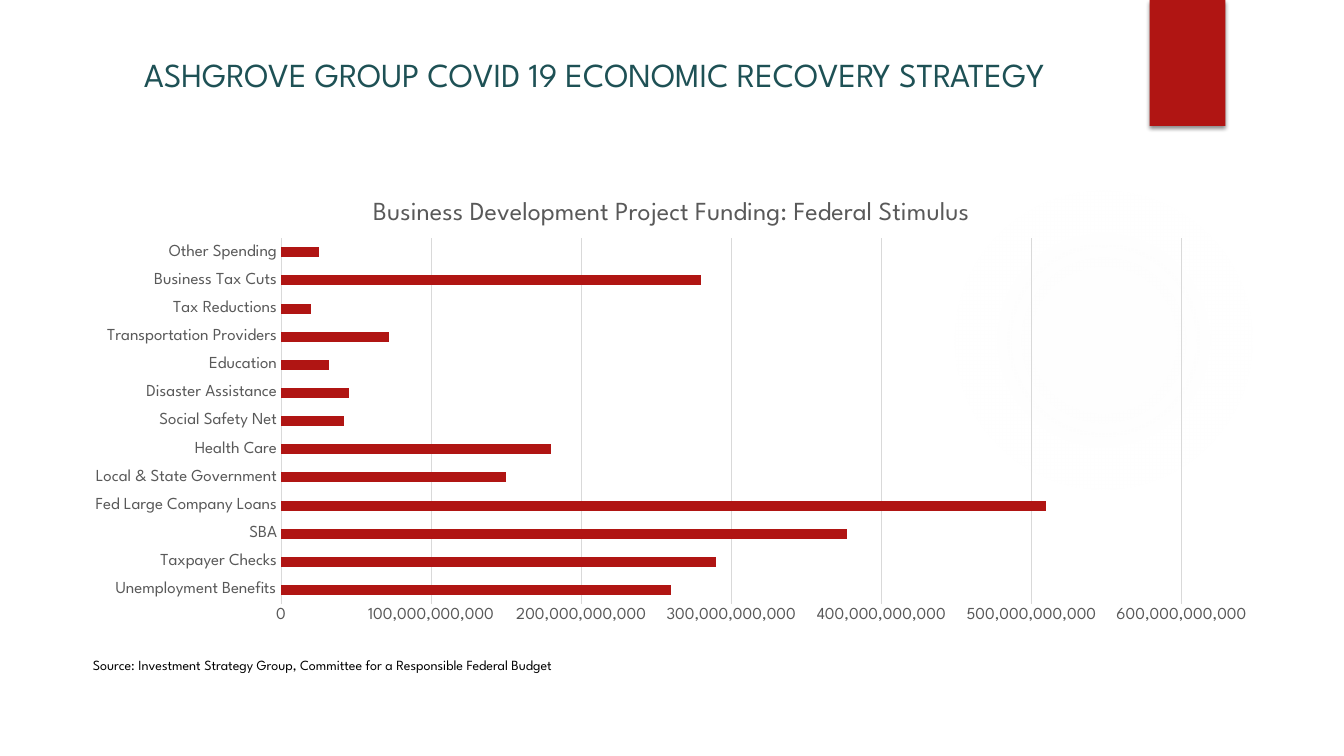
from lxml import etree
from pptx import Presentation, util as u
from pptx.chart.data import CategoryChartData
from pptx.dml.color import RGBColor
from pptx.enum import chart as charts, shapes, text
from pptx.oxml import parse_xml
from pptx.oxml.ns import nsdecls, qn

PX = 9525
FONT = "League Spartan"
COLORS = {
    "red": "B01513",
    "teal": "1E5155",
    "gray": "595959",
    "grid": "D9D9D9",
    "glow": "F3F3F3",
    "black": "000000",
}
BILLION = 10**9
FUNDING = {
    "Unemployment Benefits": 260,
    "Taxpayer Checks": 290,
    "SBA": 377,
    "Fed Large Company Loans": 510,
    "Local & State Government": 150,
    "Health Care": 180,
    "Social Safety Net": 42,
    "Disaster Assistance": 45,
    "Education": 32,
    "Transportation Providers": 72,
    "Tax Reductions": 20,
    "Business Tax Cuts": 280,
    "Other Spending": 25,
}


def px(*lengths):
    return [u.Emu(length * PX) for length in lengths]


def color(name):
    return RGBColor.from_string(COLORS[name])


def style_font(font, size, name):
    font.name = FONT
    font.size = u.Pt(size)
    font.bold = False
    font.color.rgb = color(name)


def add_run(paragraph, words, size, name):
    run = paragraph.add_run()
    run.text = words
    style_font(run.font, size, name)


def add_glow(slide, box):
    shape = slide.shapes.add_shape(shapes.MSO_SHAPE.OVAL, *px(*box))
    shape.shadow.inherit = False
    shape.line.fill.background()
    stops = "".join(
        f'<a:gs pos="{place * 1000}"><a:srgbClr val="{COLORS["glow"]}">'
        f'<a:alpha val="{alpha * 1000}"/></a:srgbClr></a:gs>'
        for place, alpha in ((0, 7), (36, 6), (69, 0), (100, 0))
    )
    gradient = parse_xml(
        f'<a:gradFill {nsdecls("a")}><a:gsLst>{stops}</a:gsLst><a:path path="circle">'
        '<a:fillToRect l="50000" t="50000" r="50000" b="50000"/></a:path></a:gradFill>'
    )
    shape.element.spPr.find(qn("a:prstGeom")).addnext(gradient)


def add_ribbon(slide, box):
    shape = slide.shapes.add_shape(shapes.MSO_SHAPE.RECTANGLE, *px(*box))
    shape.shadow.inherit = False
    shape.fill.solid()
    shape.fill.fore_color.rgb = color("red")
    shape.line.fill.background()
    shadow = parse_xml(
        f'<a:outerShdw {nsdecls("a")} blurRad="38100" dist="25400" dir="5400000" '
        f'rotWithShape="0"><a:srgbClr val="{COLORS["black"]}">'
        '<a:alpha val="45000"/></a:srgbClr></a:outerShdw>'
    )
    shape.element.spPr.find(qn("a:effectLst")).append(shadow)


def set_title(slide, words, box):
    title = slide.shapes.title
    title.left, title.top, title.width, title.height = px(*box)
    frame = title.text_frame
    frame.word_wrap = True
    frame.vertical_anchor = text.MSO_ANCHOR.TOP
    frame.margin_top = px(11)[0]
    paragraph = frame.paragraphs[0]
    paragraph.alignment = text.PP_ALIGN.CENTER
    add_run(paragraph, words, 24, "teal")


def place_plot(chart, **fractions):
    plot_area = chart._chartSpace.chart.plotArea
    for old in plot_area.findall(qn("c:layout")):
        plot_area.remove(old)
    layout = etree.Element(qn("c:layout"))
    manual = etree.SubElement(layout, qn("c:manualLayout"))
    settings = {"layoutTarget": "inner", "xMode": "edge", "yMode": "edge", **fractions}
    for tag, value in settings.items():
        etree.SubElement(manual, qn(f"c:{tag}")).set("val", str(value))
    plot_area.insert(0, layout)


def style_axis(axis):
    axis.major_tick_mark = charts.XL_TICK_MARK.NONE
    axis.minor_tick_mark = charts.XL_TICK_MARK.NONE
    style_font(axis.tick_labels.font, 12, "gray")


def style_line(line):
    line.color.rgb = color("grid")
    line.width = u.Pt(0.75)


def add_funding_chart(slide, heading, box):
    data = CategoryChartData(number_format="#,##0")
    data.categories = list(FUNDING)
    data.add_series("Series 1", [amount * BILLION for amount in FUNDING.values()])
    chart = slide.shapes.add_chart(
        charts.XL_CHART_TYPE.BAR_CLUSTERED, *px(*box), data
    ).chart
    style_font(chart.font, 10, "black")
    chart.has_legend = False
    chart.has_title = True
    add_run(chart.chart_title.text_frame.paragraphs[0], heading, 18.6, "gray")
    chart.chart_title.include_in_layout = False

    style_axis(chart.category_axis)
    style_line(chart.category_axis.format.line)
    amounts = chart.value_axis
    style_axis(amounts)
    amounts.format.line.fill.background()
    amounts.has_major_gridlines = True
    style_line(amounts.major_gridlines.format.line)
    amounts.minimum_scale = 0
    amounts.maximum_scale = 600 * BILLION
    amounts.major_unit = 100 * BILLION
    amounts.tick_labels.number_format = "#,##0"
    amounts.tick_labels.number_format_is_linked = False

    plot = chart.plots[0]
    plot.gap_width = 182
    plot.vary_by_categories = False
    bars = plot.series[0].format.fill
    bars.solid()
    bars.fore_color.rgb = color("red")
    place_plot(chart, x=0.174, y=0.129, w=0.751, h=0.803)


def add_source(slide, words, box):
    frame = slide.shapes.add_textbox(*px(*box)).text_frame
    frame.word_wrap = True
    frame.auto_size = text.MSO_AUTO_SIZE.SHAPE_TO_FIT_TEXT
    add_run(frame.paragraphs[0], words, 10, "black")


def main():
    presentation = Presentation()
    presentation.slide_width, presentation.slide_height = px(1280, 720)
    slide = presentation.slides.add_slide(presentation.slide_layouts[5])
    add_glow(slide, (903, 176, 296, 296))
    add_ribbon(slide, (1095, 0, 72, 120))
    set_title(
        slide,
        "ASHGROVE GROUP COVID 19 ECONOMIC RECOVERY STRATEGY",
        (40, 40, 1052, 155),
    )
    add_funding_chart(
        slide,
        "Business Development Project Funding: Federal Stimulus",
        (69, 171, 1142, 434),
    )
    add_source(
        slide,
        "Source: Investment Strategy Group, Committee for a Responsible Federal Budget",
        (79, 621, 632, 26),
    )
    presentation.save("out.pptx")


if __name__ == "__main__":
    main()
